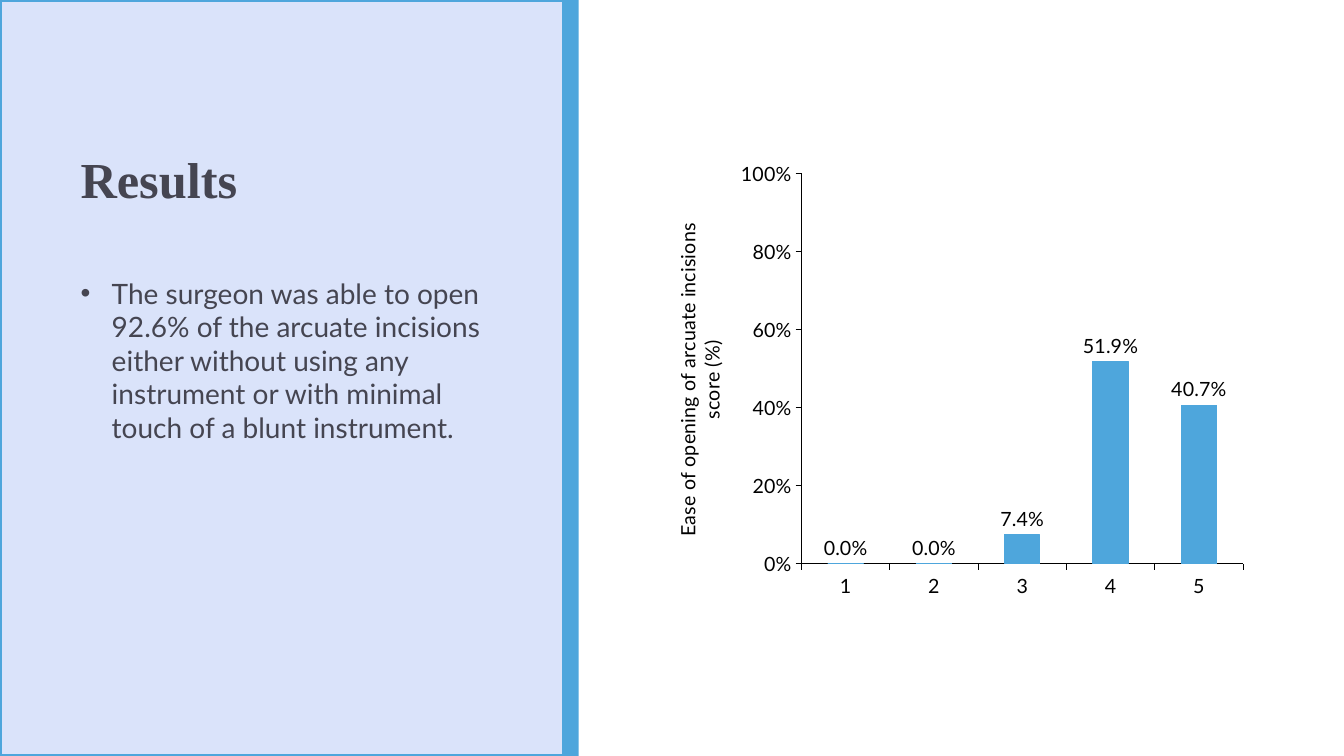
from dataclasses import dataclass
from typing import Optional

import lxml.etree
import pptx
import pptx.chart.data
import pptx.dml.color
import pptx.enum.chart
import pptx.enum.shapes
import pptx.enum.text
import pptx.oxml
import pptx.oxml.ns
import pptx.util

RGBColor = pptx.dml.color.RGBColor
LAVENDER = RGBColor(0xDA, 0xE3, 0xFA)
BLUE = RGBColor(0x4E, 0xA6, 0xDC)
SLATE = RGBColor(0x45, 0x45, 0x51)
BLACK = RGBColor(0, 0, 0)

EMU_PER_PX = 9144  # 100 px to the inch
BODY_FONT = "Lato"
TITLE_FONT = "Times New Roman"

SCORES = ("1", "2", "3", "4", "5")
SHARES = (0, 0, 0.074, 0.519, 0.407)
AXIS_TITLE_LINES = ("Ease of opening of arcuate incisions", "score (%)")
PLOT_AREA = {"x": 0.25, "y": 0.05, "w": 0.73, "h": 0.86}  # shares of the chart


@dataclass(frozen=True)
class Area:
    left: int
    top: int
    width: int
    height: int

    def emu(self) -> tuple:
        return tuple(px(side) for side in (self.left, self.top, self.width, self.height))


@dataclass(frozen=True)
class Panel:
    area: Area
    fill: RGBColor
    line: Optional[RGBColor] = None


@dataclass(frozen=True)
class TextBlock:
    area: Area
    text: str
    font: str
    size: int
    bold: bool = False
    anchor: pptx.enum.text.MSO_ANCHOR = pptx.enum.text.MSO_ANCHOR.TOP
    line_spacing: float = 1.0
    bullet_indent: int = 0


PANELS = (
    Panel(Area(0, 0, 559, 750), LAVENDER, BLUE),
    Panel(Area(558, 0, 16, 751), BLUE),
)
TEXT_BLOCKS = (
    TextBlock(Area(70, 108, 419, 147), "Results", TITLE_FONT, 36, bold=True,
              anchor=pptx.enum.text.MSO_ANCHOR.MIDDLE, line_spacing=0.84),
    TextBlock(Area(70, 269, 419, 368),
              "The surgeon was able to open 92.6% of the arcuate incisions either "
              "without using any instrument or with minimal touch of a blunt instrument.",
              BODY_FONT, 20, bullet_indent=31),
)
CHART_AREA = Area(645, 150, 600, 450)


def px(length: int) -> int:
    return pptx.util.Emu(length * EMU_PER_PX)


def style_font(font, name: str, size: int, color: RGBColor, bold: bool = False) -> None:
    font.name = name
    font.size = pptx.util.Pt(size)
    font.bold = bold
    font.color.rgb = color


def add_panel(slide, panel: Panel) -> None:
    shape = slide.shapes.add_shape(pptx.enum.shapes.MSO_SHAPE.RECTANGLE, *panel.area.emu())
    shape.shadow.inherit = False
    shape.fill.solid()
    shape.fill.fore_color.rgb = panel.fill
    if panel.line is None:
        shape.line.fill.background()
    else:
        shape.line.color.rgb = panel.line
        shape.line.width = pptx.util.Pt(2.75)


def add_bullet(para, indent: int) -> None:
    properties = para._p.get_or_add_pPr()
    properties.set("marL", str(px(indent)))
    properties.set("indent", str(-px(indent)))
    for tag, name, value in (("a:buFont", "typeface", "Arial"), ("a:buChar", "char", "•")):
        lxml.etree.SubElement(properties, pptx.oxml.ns.qn(tag)).set(name, value)


def add_text(slide, block: TextBlock) -> None:
    box = slide.shapes.add_textbox(*block.area.emu())
    frame = box.text_frame
    frame.word_wrap = True
    frame.vertical_anchor = block.anchor
    para = frame.paragraphs[0]
    para.line_spacing = block.line_spacing
    if block.bullet_indent:
        add_bullet(para, block.bullet_indent)
    span = para.add_run()
    span.text = block.text
    style_font(span.font, block.font, block.size, SLATE, block.bold)


def style_axis(axis) -> None:
    axis.has_major_gridlines = False
    axis.major_tick_mark = pptx.enum.chart.XL_TICK_MARK.OUTSIDE
    axis.minor_tick_mark = pptx.enum.chart.XL_TICK_MARK.NONE
    axis.format.line.color.rgb = BLACK
    axis.format.line.width = pptx.util.Pt(0.75)
    style_font(axis.tick_labels.font, BODY_FONT, 14, BLACK)


def place_plot(chart) -> None:
    plot_area = chart._chartSpace.chart.plotArea
    for old_layout in plot_area.findall(pptx.oxml.ns.qn("c:layout")):
        plot_area.remove(old_layout)
    layout = pptx.oxml.parse_xml(f"<c:layout {pptx.oxml.ns.nsdecls('c')}/>")
    manual = lxml.etree.SubElement(layout, pptx.oxml.ns.qn("c:manualLayout"))
    settings = {"layoutTarget": "inner", "xMode": "edge", "yMode": "edge", **PLOT_AREA}
    for name, value in settings.items():
        lxml.etree.SubElement(manual, pptx.oxml.ns.qn(f"c:{name}")).set("val", str(value))
    plot_area.insert(0, layout)


def add_score_chart(slide) -> None:
    data = pptx.chart.data.CategoryChartData(number_format="0.0%")
    data.categories = SCORES
    data.add_series("Series 1", SHARES)
    chart = slide.shapes.add_chart(
        pptx.enum.chart.XL_CHART_TYPE.COLUMN_CLUSTERED, *CHART_AREA.emu(), data).chart
    chart.has_legend = False
    chart.has_title = False
    style_font(chart.font, BODY_FONT, 14, BLACK)
    place_plot(chart)

    # Axes
    style_axis(chart.category_axis)
    value_axis = chart.value_axis
    style_axis(value_axis)
    value_axis.minimum_scale, value_axis.maximum_scale = 0, 1
    value_axis.major_unit = 0.2
    value_axis.tick_labels.number_format = "0%"
    value_axis.tick_labels.number_format_is_linked = False
    frame = value_axis.axis_title.text_frame
    for index, line in enumerate(AXIS_TITLE_LINES):
        para = frame.add_paragraph() if index else frame.paragraphs[0]
        span = para.add_run()
        span.text = line
        style_font(span.font, BODY_FONT, 14, BLACK)

    # Columns and their labels
    plot = chart.plots[0]
    plot.vary_by_categories = False
    plot.gap_width = 150
    plot.overlap = -27
    columns = plot.series[0]
    columns.format.fill.solid()
    columns.format.fill.fore_color.rgb = BLUE
    columns.format.line.color.rgb = BLUE
    columns.format.line.width = pptx.util.Pt(0.75)
    labels = columns.data_labels
    labels.show_value = True
    labels.number_format = "0.0%"
    labels.number_format_is_linked = False
    labels.position = pptx.enum.chart.XL_LABEL_POSITION.OUTSIDE_END
    style_font(labels.font, BODY_FONT, 14, BLACK)


def main() -> None:
    deck = pptx.Presentation()
    deck.slide_width, deck.slide_height = px(1333), px(750)
    page = deck.slides.add_slide(deck.slide_layouts[6])
    for panel in PANELS:
        add_panel(page, panel)
    for block in TEXT_BLOCKS:
        add_text(page, block)
    add_score_chart(page)
    deck.save("out.pptx")


if __name__ == "__main__":
    main()
